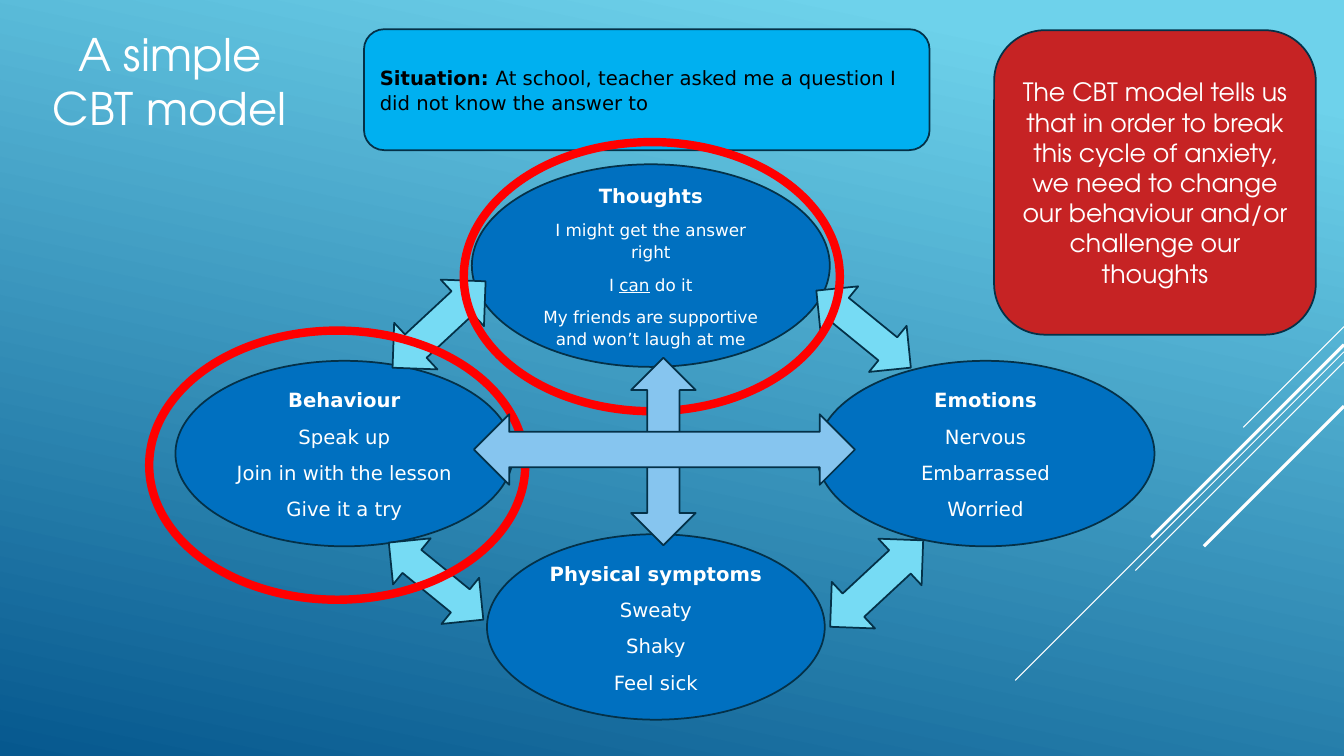
from pptx import Presentation
from pptx.dml.color import RGBColor
from pptx.enum.shapes import MSO_CONNECTOR, MSO_SHAPE as Kind
from pptx.enum.text import MSO_ANCHOR as Anchor, PP_ALIGN as Align
from pptx.util import Inches, Pt
from lxml import etree

HUES = {
    "sky": "6ED2EB", "deep": "06588E", "white": "FFFFFF", "black": "000000",
    "edge": "043148", "cyan": "00B0F0", "blue": "0070C0", "aqua": "76DBF4",
    "pale": "86C5EF", "red": "FF0000", "brick": "C62324",
}
RGB = {name: RGBColor.from_string(code) for name, code in HUES.items()}
SANS, ROUND = "DejaVu Sans", "TeX Gyre Adventor"
DRAW = "http://schemas.openxmlformats.org/drawingml/2006/main"

deck = Presentation()
deck.slide_width, deck.slide_height = Inches(13.33), Inches(7.5)
slide = deck.slides.add_slide(deck.slide_layouts[5])
shapes = slide.shapes

back = slide.background.fill
back.gradient()
back.gradient_angle = 360 - 102
for stop, (name, place) in zip(back.gradient_stops, [("sky", 0.1), ("deep", 1)]):
    stop.color.rgb = RGB[name]
    stop.position = place


def draw(kind, box, fill, edge="edge", width=1.25, turn=0):
    """Add a flat shape; a fill of None leaves it open."""
    shape = shapes.add_shape(kind, *[Inches(n) for n in box])
    shape.shadow.inherit = False
    shape.rotation = turn
    if fill:
        shape.fill.solid()
        shape.fill.fore_color.rgb = RGB[fill]
    else:
        shape.fill.background()
    shape.line.color.rgb = RGB[edge]
    shape.line.width = Pt(width)
    return shape


def write(shape, paras, font, hue="white", align=Align.CENTER, lead=1.07, after=8):
    """Fill a shape with paragraphs, each a list of (text, font formats) runs."""
    frame = shape.text_frame
    frame.word_wrap = True
    frame.vertical_anchor = Anchor.MIDDLE
    for i, runs in enumerate(paras):
        para = frame.add_paragraph() if i else frame.paragraphs[0]
        para.alignment, para.line_spacing, para.space_after = align, lead, Pt(after)
        for text, style in runs:
            run = para.add_run()
            run.text = text
            run.font.name = font
            run.font.color.rgb = RGB[hue]
            for key, value in style.items():
                setattr(run.font, key, value)


# Title
title = shapes.title
title.left, title.top = Inches(0.26), Inches(0.21)
title.width, title.height = Inches(2.85), Inches(1.18)
write(title, [[("A simple CBT model", {"size": Pt(32)})]], ROUND, lead=1, after=0)

# Diagonal lines at the right edge: start height, run to the left, width
for top, run, width in [(3.24, 1, 0.75), (3.49, 3.26, 0.75), (3.59, 2.07, 0.75),
                        (3.42, 1.91, 2.25), (4.03, 1.39, 2.25)]:
    ends = [Inches(n) for n in (13.33, top, 13.33 - run, top + run)]
    line = shapes.add_connector(MSO_CONNECTOR.STRAIGHT, *ends)
    line.line.color.rgb = RGB["white"]
    line.line.width = Pt(width)
    etree.SubElement(line._element.spPr, f"{{{DRAW}}}effectLst")

# Situation
head, body, small = {"size": Pt(14), "bold": True}, {"size": Pt(14)}, {"size": Pt(12)}
case = draw(Kind.ROUNDED_RECTANGLE, (3.61, 0.29, 5.61, 1.2), "cyan")
fact = "At school, teacher asked me a question I did not know the answer to"
write(case, [[("Situation: ", head), (fact, body)]], SANS, "black", Align.LEFT)

# The four parts of the cycle
thoughts = [
    [("I might get the answer right", small)],
    [("I ", small), ("can", {**small, "underline": True}), (" do it", small)],
    [("My friends are supportive and won’t laugh at me", small)],
]
parts = [
    ("Thoughts", (4.68, 1.63, 3.55, 2.01), thoughts),
    ("Emotions", (8.1, 3.58, 3.35, 1.84), ["Nervous", "Embarrassed", "Worried"]),
    ("Physical symptoms", (4.83, 5.3, 3.35, 1.84), ["Sweaty", "Shaky", "Feel sick"]),
    ("Behaviour", (1.74, 3.58, 3.35, 1.84),
     ["Speak up", "Join in with the lesson", "Give it a try"]),
]
for name, box, items in parts:
    rows = [[(item, body)] if isinstance(item, str) else item for item in items]
    oval = draw(Kind.FLOWCHART_CONNECTOR, box, "blue")
    write(oval, [[(name, head)]] + rows, SANS)

# Arrows around the cycle
for left, top, wide, high, turn in [(4.04, 2.59, 0.63, 1.26, 47.1),
                                    (8.27, 2.66, 0.59, 1.21, 129.2),
                                    (8.38, 5.16, 0.63, 1.26, 47.1),
                                    (4.03, 5.16, 0.59, 1.21, 129.2)]:
    draw(Kind.UP_DOWN_ARROW, (left, top, wide, high), "aqua", turn=turn)

# Red rings
for left, top in [(4.6, 1.41), (1.48, 3.28)]:
    draw(Kind.OVAL, (left, top, 3.73, 2.67), None, "red", 6)

# Message
note = draw(Kind.ROUNDED_RECTANGLE, (9.86, 0.3, 3.19, 3.02), "brick")
advice = ("The CBT model tells us that in order to break this cycle of anxiety, "
          "we need to change our behaviour and/or challenge our thoughts")
write(note, [[(advice, {"size": Pt(18)})]], ROUND, lead=1, after=0)

# Arrows across the middle
draw(Kind.LEFT_RIGHT_ARROW, (5.65, 4.16, 1.86, 0.64), "pale", turn=90)
draw(Kind.LEFT_RIGHT_ARROW, (4.7, 4.11, 3.78, 0.7), "pale")

deck.save("out.pptx")
